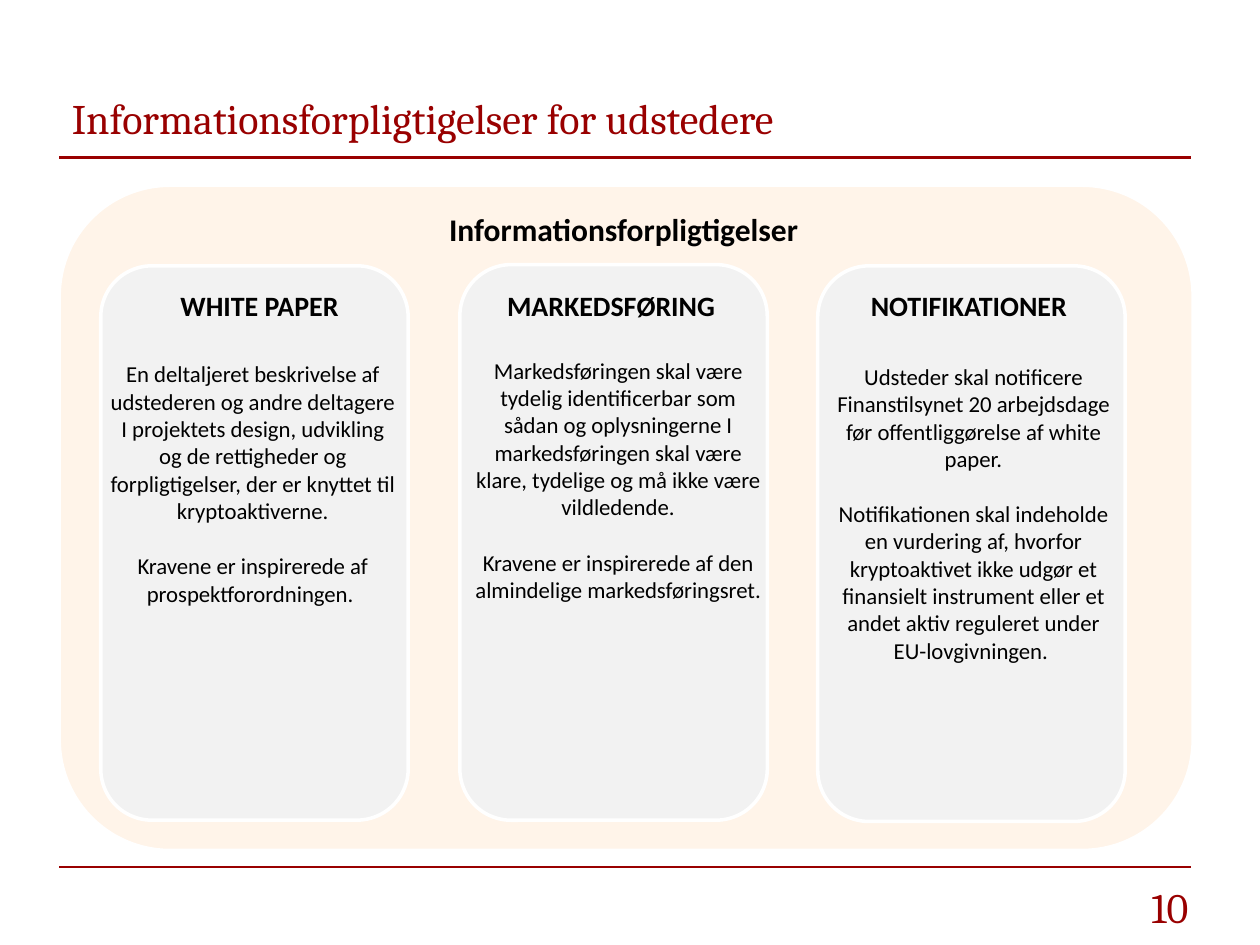
"""Build the slide on information duties for issuers."""
from lxml import etree
from pptx import Presentation
from pptx.dml.color import RGBColor
from pptx.enum import shapes, text
from pptx.oxml.ns import qn
from pptx.util import Inches, Pt

COLORS = {"red": "990000", "panel": "FFF4E9", "card": "F2F2F2", "white": "FFFFFF", "black": "000000"}
TITLE = "Informationsforpligtigelser for udstedere"
HEADING = "Informationsforpligtigelser"
NUMBER = "10"
CARDS = [
    {"head": "WHITE PAPER", "card": (0.8, 2.11, 2.44, 4.4),
     "head_at": (0.8, 2.24, 2.52, 0.37), "body_at": (0.77, 2.81, 2.47, 2.06),
     "body": ["En deltaljeret beskrivelse af udstederen og andre deltagere I projektets design, "
              "udvikling og de rettigheder og forpligtigelser, der er knyttet til kryptoaktiverne.",
              "Kravene er inspirerede af prospektforordningen. "]},
    {"head": "MARKEDSFØRING", "card": (3.65, 2.1, 2.44, 4.41),
     "head_at": (3.62, 2.24, 2.46, 0.37), "body_at": (3.67, 2.78, 2.47, 2.29),
     "body": ["Markedsføringen skal være tydelig identificerbar som sådan og oplysningerne I "
              "markedsføringen skal være klare, tydelige og må ikke være vildledende.",
              "Kravene er inspirerede af den almindelige markedsføringsret. "]},
    {"head": "NOTIFIKATIONER", "card": (6.49, 2.11, 2.44, 4.41),
     "head_at": (6.46, 2.24, 2.46, 0.37), "body_at": (6.49, 2.83, 2.47, 2.67),
     "body": ["Udsteder skal notificere Finanstilsynet 20 arbejdsdage før offentliggørelse af white paper.",
              "Notifikationen skal indeholde en vurdering af, hvorfor kryptoaktivet ikke udgør et "
              "finansielt instrument eller et andet aktiv reguleret under EU-lovgivningen. "]},
]
FORMATS = {
    "title": {"name": "Cambria", "size": Pt(24), "bold": False},
    "heading": {"name": "Calibri", "size": Pt(18), "bold": True},
    "head": {"name": "Calibri", "size": Pt(16), "bold": True},
    "body": {"name": "Calibri", "size": Pt(13), "bold": False},
}
GAP = Pt(15.9)


def rgb(name):
    return RGBColor.from_string(COLORS[name])


def write(sp, paragraphs, style, color="black", align=text.PP_ALIGN.CENTER, anchor=text.MSO_ANCHOR.TOP):
    tf = sp.text_frame
    tf.word_wrap = True
    tf.vertical_anchor = anchor
    for i, words in enumerate(paragraphs):
        p = tf.add_paragraph() if i else tf.paragraphs[0]
        p.alignment = align
        p.space_before = GAP if i else Pt(0)
        r = p.add_run()
        r.text = words
        for key, value in FORMATS[style].items():
            setattr(r.font, key, value)
        r.font.color.rgb = rgb(color)


def add_text(s, at, paragraphs, style, **options):
    write(s.shapes.add_textbox(*map(Inches, at)), paragraphs, style, **options)


def add_card(s, at, fill):
    sp = s.shapes.add_shape(shapes.MSO_SHAPE.ROUNDED_RECTANGLE, *map(Inches, at))
    sp.shadow.inherit = False
    sp.fill.solid()
    sp.fill.fore_color.rgb = rgb(fill)
    sp.line.color.rgb = rgb("white")
    sp.line.width = Pt(2)


def add_rule(s, y):
    line = s.shapes.add_connector(shapes.MSO_CONNECTOR.STRAIGHT, *map(Inches, (0.47, y, 9.45, y)))
    line.line.color.rgb = rgb("red")
    line.line.width = Pt(1.25)
    etree.SubElement(line._element.spPr, qn("a:effectLst"))


def main():
    prs = Presentation()
    prs.slide_width, prs.slide_height = Inches(10), Inches(7.5)
    s = prs.slides.add_slide(prs.slide_layouts[5])
    title = s.shapes.title
    title.left, title.top, title.width, title.height = map(Inches, (0.47, 0.59, 9, 0.69))
    write(title, [TITLE], "title", "red", text.PP_ALIGN.LEFT, text.MSO_ANCHOR.MIDDLE)
    for y in (1.25, 6.88):
        add_rule(s, y)
    add_text(s, (0.47, 6.95, 9.06, 0.47), [NUMBER], "title", color="red", align=text.PP_ALIGN.RIGHT)
    add_card(s, (0.47, 1.47, 9, 5.28), "panel")
    add_text(s, (0.45, 1.62, 9, 0.4), [HEADING], "heading")
    for card in CARDS:
        add_card(s, card["card"], "card")
        add_text(s, card["head_at"], [card["head"]], "head")
        add_text(s, card["body_at"], card["body"], "body")
    prs.save("out.pptx")


if __name__ == "__main__":
    main()
